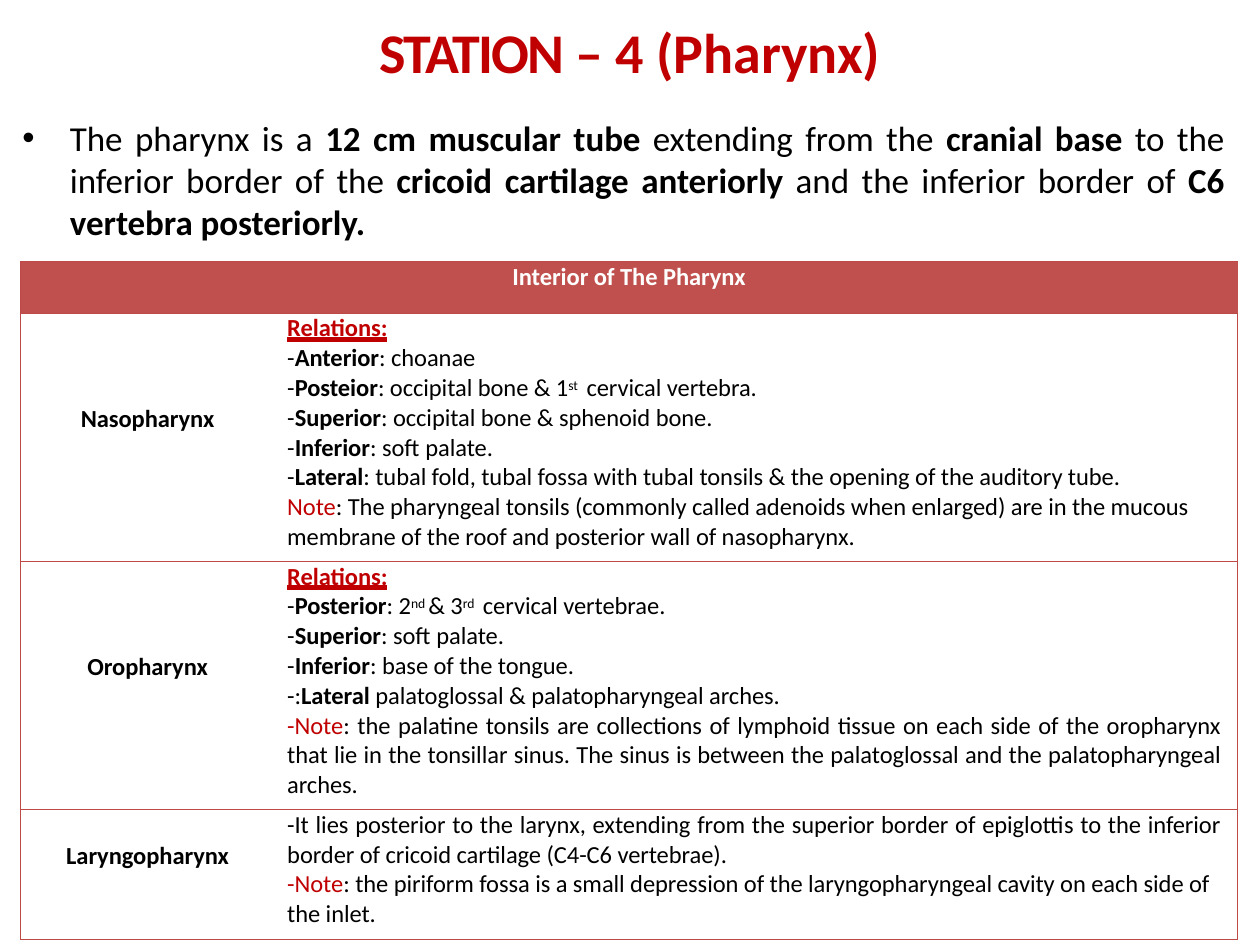
from lxml.etree import SubElement
from pptx import Presentation
from pptx.dml.color import RGBColor
from pptx.enum.text import MSO_ANCHOR as ANCHOR, MSO_UNDERLINE as UNDERLINE, PP_ALIGN as ALIGN
from pptx.oxml.ns import qn
from pptx.util import Cm, Pt

RED = RGBColor(0xC0, 0x00, 0x00)
BLACK = RGBColor(0x00, 0x00, 0x00)
WHITE = RGBColor(0xFF, 0xFF, 0xFF)
BRICK = RGBColor(0xC0, 0x50, 0x4D)
RULE = RGBColor(0xBD, 0x4A, 0x47)
FONT = "Calibri"
NO_STYLE = "{2D5ABB26-0587-4C30-8999-92F81FD0307C}"
NO_MARGINS = dict.fromkeys(("margin_left", "margin_top", "margin_right", "margin_bottom"), 0)

TITLE = "STATION – 4 (Pharynx)"
INTRO = ("The pharynx is a *12 cm muscular tube* extending from the *cranial base* to the "
         "inferior border of the *cricoid cartilage anteriorly* and the inferior border of "
         "*C6 vertebra posteriorly.*")
HEADER = "Interior of The Pharynx"
PARTS = [
    ("Nasopharynx", 1.97 * 2.54, [
        ("_Relations:_", ALIGN.LEFT),
        ("-*Anterior*: choanae", ALIGN.LEFT),
        ("-*Posteior*: occipital bone & 1^st ^ cervical vertebra.", ALIGN.LEFT),
        ("-*Superior*: occipital bone & sphenoid bone.", ALIGN.LEFT),
        ("-*Inferior*: soft palate.", ALIGN.LEFT),
        ("-*Lateral*: tubal fold, tubal fossa with tubal tonsils & the opening of the "
         "auditory tube.", ALIGN.LEFT),
        ("~Note~: The pharyngeal tonsils (commonly called adenoids when enlarged) are in the "
         "mucous membrane of the roof and posterior wall of nasopharynx.", ALIGN.LEFT),
    ]),
    ("Oropharynx", 1.97 * 2.54, [
        ("_Relations:_", ALIGN.JUSTIFY),
        ("-*Posterior*: 2^nd ^& 3^rd ^ cervical vertebrae.", ALIGN.JUSTIFY),
        ("-*Superior*: soft palate.", ALIGN.JUSTIFY),
        ("-*Inferior*: base of the tongue.", ALIGN.JUSTIFY),
        ("-:*Lateral* palatoglossal & palatopharyngeal arches.", ALIGN.JUSTIFY),
        ("~-Note~: the palatine tonsils are collections of lymphoid tissue on each side of the "
         "oropharynx that lie in the tonsillar sinus. The sinus is between the palatoglossal "
         "and the palatopharyngeal arches.", ALIGN.JUSTIFY),
    ]),
    ("Laryngopharynx", 1.03 * 2.54, [
        ("-It lies posterior to the larynx, extending from the superior border of epiglottis to "
         "the inferior border of cricoid cartilage (C4-C6 vertebrae).", ALIGN.JUSTIFY),
        ("~-Note~: the piriform fossa is a small depression of the laryngopharyngeal cavity on "
         "each side of the inlet.", ALIGN.LEFT),
    ]),
]
MARKS = {
    "*": {"bold": True},
    "~": {"color": RED},
    "_": {"bold": True, "underline": UNDERLINE.HEAVY_LINE, "color": RED},
    "^": {"size": 13.5, "baseline": 25000},
}


def set_all(obj, values):
    for name, value in values.items():
        setattr(obj, name, value)


def add_run(p, text, size, color=BLACK, bold=False, underline=None, baseline=None, spacing=-5):
    r = p.add_run()
    r.text = text
    set_all(r.font, {"name": FONT, "size": Pt(size), "bold": bold, "underline": underline})
    r.font.color.rgb = color
    r.font._element.set("spc", str(spacing))
    if baseline:
        r.font._element.set("baseline", str(baseline))


def add_marked(p, text, size):
    """Write text in which a pair of MARKS characters encloses a format."""
    chunk, mark = "", None
    for ch in text:
        if ch not in MARKS:
            chunk += ch
            continue
        if chunk:
            add_run(p, chunk, **{"size": size, **MARKS.get(mark, {})})
        chunk, mark = "", None if mark else ch
    if chunk:
        add_run(p, chunk, size)


def add_box(s, left, top, width, height, align):
    tf = s.shapes.add_textbox(Cm(left), Cm(top), Cm(width), Cm(height)).text_frame
    set_all(tf, {**NO_MARGINS, "word_wrap": True})
    p = tf.paragraphs[0]
    p.alignment = align
    return p


def add_title(s, left, top, width, height):
    p = add_box(s, left, top, width, height, ALIGN.CENTER)
    word, rest = TITLE[:8], TITLE[8:]
    add_run(p, word, 32, RED, True, spacing=-110)
    add_run(p, rest, 32, RED, True)


def add_intro(s, left, top, width, height):
    p = add_box(s, left, top, width, height, ALIGN.JUSTIFY)
    pPr = p._p.get_or_add_pPr()
    pPr.set("marL", str(Cm(0.98)))
    pPr.set("indent", str(-Cm(0.96)))
    SubElement(pPr, qn("a:buFont"), typeface="Arial")
    SubElement(pPr, qn("a:buChar"), char="•")
    add_marked(p, INTRO, 20)


def set_borders(cell, sides):
    """Rule the given sides (L, R, T, B in this order); call before filling."""
    tcPr = cell._tc.get_or_add_tcPr()
    for side in sides:
        ln = SubElement(tcPr, qn(f"a:ln{side}"), w=str(Pt(0.75)))
        fill = SubElement(ln, qn("a:solidFill"))
        SubElement(fill, qn("a:srgbClr"), val=str(RULE))


def add_pharynx_table(s, left, top, col_widths, header_height):
    heights = [header_height] + [height for _, height, _ in PARTS]
    table = s.shapes.add_table(len(heights), len(col_widths), Cm(left), Cm(top),
                               Cm(sum(col_widths)), Cm(sum(heights))).table
    table._tbl.tblPr.find(qn("a:tableStyleId")).text = NO_STYLE
    for col, width in zip(table.columns, col_widths):
        col.width = Cm(width)
    for row, height in zip(table.rows, heights):
        row.height = Cm(height)
        for cell, sides in zip(row.cells, ("LTB", "RTB")):
            set_all(cell, NO_MARGINS)
            set_borders(cell, sides)
            cell.fill.background()

    header = table.cell(0, 0)
    header.merge(table.cell(0, 1))
    header.fill.solid()
    header.fill.fore_color.rgb = BRICK
    p = header.text_frame.paragraphs[0]
    p.alignment = ALIGN.CENTER
    add_run(p, HEADER, 14, WHITE, True)

    for i, (name, _, lines) in enumerate(PARTS, 1):
        label, details = table.cell(i, 0), table.cell(i, 1)
        set_all(label, {"vertical_anchor": ANCHOR.MIDDLE, "margin_left": Cm(0.33),
                        "margin_bottom": Cm(0.76)})
        p = label.text_frame.paragraphs[0]
        p.alignment = ALIGN.CENTER
        add_run(p, name, 14, bold=True)

        set_all(details, {"margin_left": Cm(0.58), "margin_right": Cm(0.34)})
        tf = details.text_frame
        for j, (text, align) in enumerate(lines):
            p = tf.add_paragraph() if j else tf.paragraphs[0]
            p.alignment = align
            add_marked(p, text, 14)


def main():
    prs = Presentation()
    prs.slide_width, prs.slide_height = Cm(25.4), Cm(19.05)
    s = prs.slides.add_slide(prs.slide_layouts[6])
    add_intro(s, 0.43, 2.34, 24.25, 2.54)
    add_title(s, 0, 0.36, 25.4, 1.37)
    add_pharynx_table(s, 0.41, 5.28, (4.8, 19.74), 1.04)
    prs.save("out.pptx")


if __name__ == "__main__":
    main()
